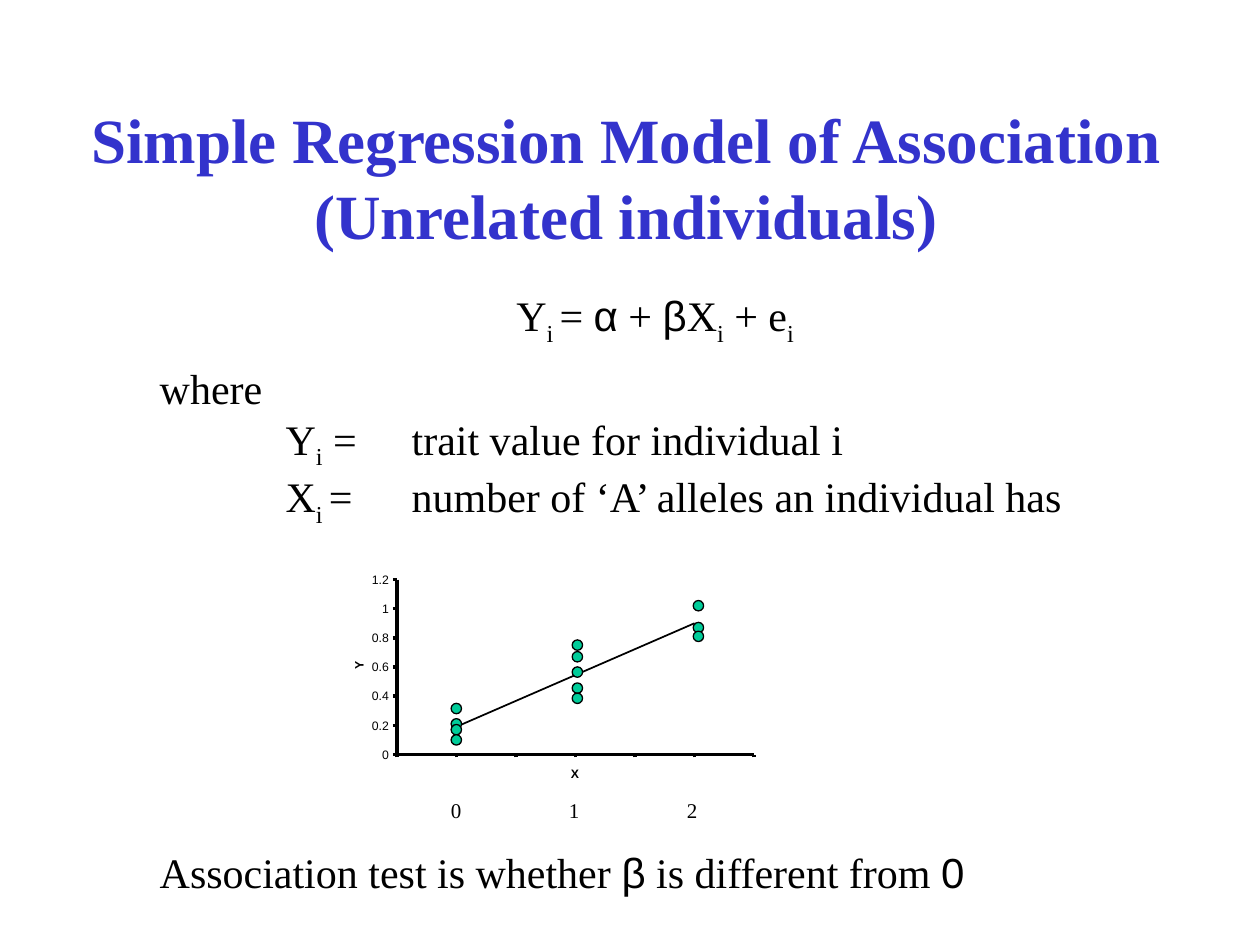
from lxml import etree
from pptx import Presentation
from pptx import util as u
from pptx.dml.color import RGBColor
from pptx.enum import shapes, text
from pptx.oxml.ns import qn

SERIF, SANS = "Times New Roman", "Arial"
LEFT, CENTER, RIGHT = text.PP_ALIGN.LEFT, text.PP_ALIGN.CENTER, text.PP_ALIGN.RIGHT
BLACK, TITLE_BLUE, DOT_GREEN = "000000", "3333CC", "00CC99"

# Plot geometry in cm
AXIS_X, AXIS_Y = 8.0, 15.21
X_TICK, X_TICKS = 1.2, 6
Y_UNIT, Y_MAX = 2.94, 1.2
DOT = 0.21
TRAITS = {
    0: [0.21, 0.17, 0.1, 0.315],
    1: [0.565, 0.67, 0.75, 0.455, 0.385],
    2: [0.87, 0.81, 1.02],
}


def color(value):
    return RGBColor.from_string(value)


def plot_x(genotype):
    return AXIS_X + X_TICK * (1 + 2 * genotype)


def plot_y(trait):
    return AXIS_Y - Y_UNIT * trait


class Painter:
    def __init__(self, page):
        self.page = page

    def text(self, place, lines, size=24, font=SERIF, fill=BLACK, bold=False,
             align=LEFT, wrap=False, inset=True, tabs=(), turn=0):
        """Each line is a string or a list of (string, style) spans; style is "", "sub" or "sans"."""
        box = self.page.shapes.add_textbox(*map(u.Cm, place))
        box.rotation = turn
        frame = box.text_frame
        frame.word_wrap = wrap
        if not inset:
            frame.margin_left = frame.margin_right = 0
            frame.margin_top = frame.margin_bottom = 0
        for index, line in enumerate(lines):
            para = frame.paragraphs[0] if index == 0 else frame.add_paragraph()
            para.alignment = align
            if tabs:
                stops = etree.SubElement(para._p.get_or_add_pPr(), qn("a:tabLst"))
                for stop in tabs:
                    etree.SubElement(stops, qn("a:tab"), pos=str(u.Cm(stop)), algn="l")
            para.font.size = u.Pt(size)
            para.font.name = font
            para.font.bold = bold
            para.font.color.rgb = color(fill)
            for words, style in [(line, "")] if isinstance(line, str) else line:
                span = para.add_run()
                span.text = words
                if style == "sans":
                    span.font.name = SANS
                elif style == "sub":
                    span._r.get_or_add_rPr().set("baseline", "-25000")

    def plot_label(self, place, words, **style):
        self.text(place, [words], size=7, font=SANS, inset=False, **style)

    def line(self, x1, y1, x2, y2, width=0):
        line = self.page.shapes.add_connector(
            shapes.MSO_CONNECTOR.STRAIGHT, *map(u.Cm, (x1, y1, x2, y2)))
        line.line.color.rgb = color(BLACK)
        line.line.width = u.Pt(width)
        etree.SubElement(line._element.spPr, qn("a:effectLst"))

    def dot(self, x, y):
        dot = self.page.shapes.add_shape(
            shapes.MSO_SHAPE.OVAL, *map(u.Cm, (x - DOT / 2, y - DOT / 2, DOT, DOT)))
        dot.shadow.inherit = False
        dot.fill.solid()
        dot.fill.fore_color.rgb = color(DOT_GREEN)
        dot.line.color.rgb = color(BLACK)
        dot.line.width = u.Pt(0.75)


def draw_plot(painter):
    painter.line(AXIS_X, plot_y(Y_MAX), AXIS_X, AXIS_Y)
    painter.line(AXIS_X, AXIS_Y, AXIS_X + X_TICK * X_TICKS, AXIS_Y)
    for step in range(7):
        y = plot_y(step / 5)
        painter.line(AXIS_X - 0.08, y, AXIS_X, y)
        painter.plot_label((7.48, y - 0.15, 0.36, 0.3), f"{step / 5:g}", align=RIGHT)
    for step in range(X_TICKS + 1):
        x = AXIS_X + X_TICK * step
        painter.line(x, AXIS_Y + 0.06, x, AXIS_Y)
    painter.line(plot_x(0), plot_y(0.19), plot_x(2), plot_y(0.9), width=1)
    painter.plot_label((11.51, 15.44, 0.15, 0.3), "X", bold=True)
    painter.plot_label((7.16, 13.28, 0.15, 0.3), "Y", bold=True, turn=270)
    for genotype, traits in TRAITS.items():
        painter.text((8.84 + 2.38 * genotype, 15.95, 0.71, 0.76), [str(genotype)], size=12)
        for trait in traits:
            painter.dot(plot_x(0) + 2.44 * genotype, plot_y(trait))


def main():
    deck = Presentation()
    deck.slide_width, deck.slide_height = u.Cm(25.4), u.Cm(19.05)
    painter = Painter(deck.slides.add_slide(deck.slide_layouts[6]))

    painter.text((1.47, 1.9, 22.3, 3.33),
                 ["Simple Regression Model of Association", "(Unrelated individuals)"],
                 size=36, fill=TITLE_BLUE, bold=True, align=CENTER)
    painter.text((10.16, 5.72, 6.22, 1.27), [
        [("Y", ""), ("i ", "sub"), ("= ", ""), ("α", "sans"), (" + ", ""), ("β", "sans"),
         ("X", ""), ("i", "sub"), (" + e", ""), ("i", "sub")]])
    painter.text((2.97, 7.19, 18.85, 3.3), [
        "where",
        [("\tY", ""), ("i", "sub"), (" = \ttrait value for individual i", "")],
        [("\tX", ""), ("i ", "sub"), ("=\tnumber of ‘A’ alleles an individual has", "")],
    ], tabs=(2.54, 5.08))
    draw_plot(painter)
    painter.text((2.97, 16.94, 19.89, 2.31), [
        [("Association test is whether ", ""), ("β", "sans"),
         (" is different from ", ""), ("0", "sans")]], wrap=True)

    deck.save("out.pptx")


if __name__ == "__main__":
    main()
